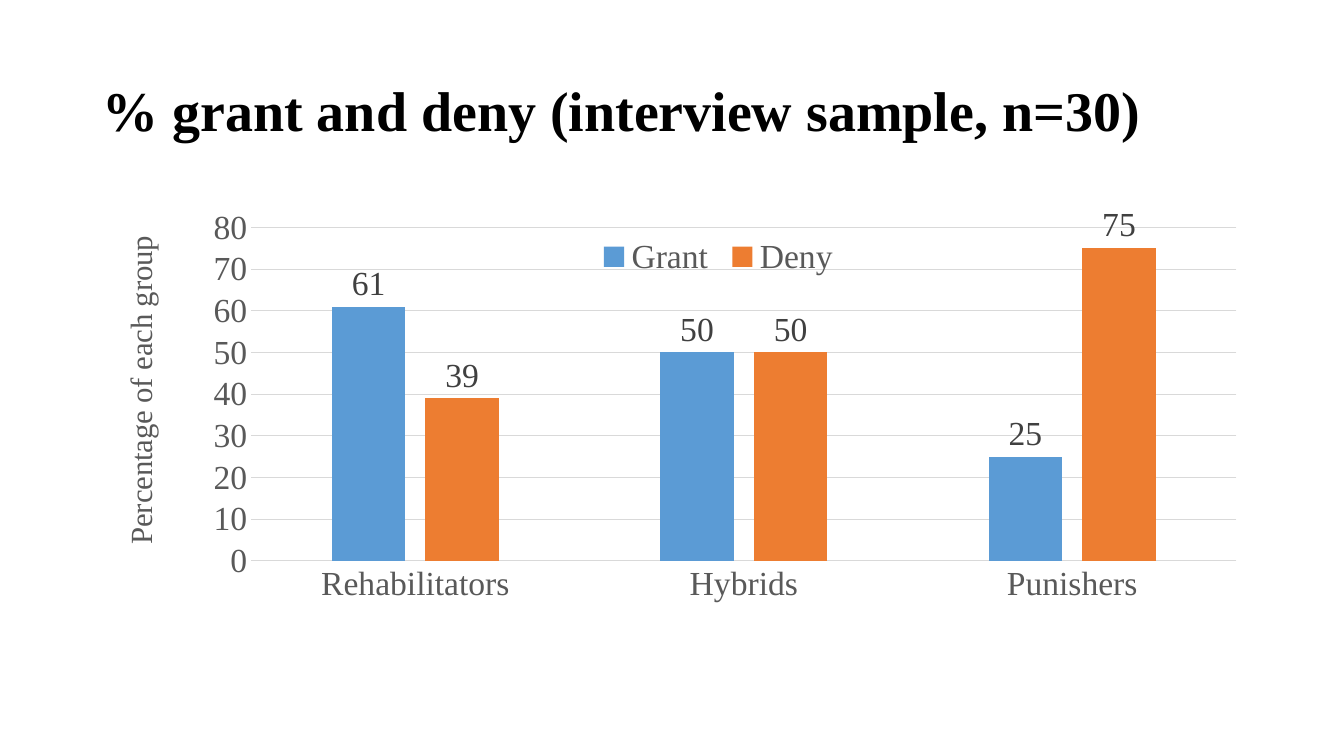
"""Build a slide with a column chart of grant and deny rates by group."""
from lxml import etree
from pptx import Presentation
from pptx.chart.data import CategoryChartData
from pptx.dml.color import RGBColor
from pptx.enum.chart import XL_CHART_TYPE, XL_LABEL_POSITION, XL_LEGEND_POSITION, XL_TICK_MARK
from pptx.enum.text import MSO_ANCHOR, MSO_AUTO_SIZE, PP_ALIGN
from pptx.oxml.ns import qn
from pptx.util import Pt

COLUMN = XL_CHART_TYPE.COLUMN_CLUSTERED
OUTSIDE = XL_LABEL_POSITION.OUTSIDE_END
BOTTOM = XL_LEGEND_POSITION.BOTTOM
NO_TICK = XL_TICK_MARK.NONE
MIDDLE = MSO_ANCHOR.MIDDLE
NO_FIT = MSO_AUTO_SIZE.NONE
LEFT = PP_ALIGN.LEFT
FACE = "Times New Roman"
GREY = "595959"
RULE = "D9D9D9"


def style(font, size, color, bold=False):
    values = {"name": FACE, "size": Pt(size), "bold": bold}
    for key, value in values.items():
        setattr(font, key, value)
    font.color.rgb = RGBColor.from_string(color)


def place(part, index, values):
    for old in part.findall(qn("c:layout")):
        part.remove(old)
    layout = etree.Element(qn("c:layout"))
    manual = etree.SubElement(layout, qn("c:manualLayout"))
    for key, value in values.items():
        etree.SubElement(manual, qn("c:" + key)).set("val", str(value))
    part.insert(index, layout)


deck = Presentation()
deck.slide_width, deck.slide_height = Pt(960), Pt(540)
slide = deck.slides.add_slide(deck.slide_layouts[5])

title = slide.shapes.title
box = {"left": Pt(66), "top": Pt(28.75), "width": Pt(828), "height": Pt(104.4)}
for key, value in box.items():
    setattr(title, key, value)
frame = title.text_frame
frame.text = "% grant and deny (interview sample, n=30)"
for key, value in {"vertical_anchor": MIDDLE, "auto_size": NO_FIT, "word_wrap": True}.items():
    setattr(frame, key, value)
line = frame.paragraphs[0]
line.alignment, line.line_spacing = LEFT, 0.9
style(line.runs[0].font, 40, "000000", True)

data = CategoryChartData()
data.categories = ["Rehabilitators", "Hybrids", "Punishers"]
data.add_series("Grant", [61, 50, 25])
data.add_series("Deny", [39, 50, 75])
chart = slide.shapes.add_chart(COLUMN, Pt(66), Pt(144), Pt(828), Pt(342.7), data).chart
chart.has_title = False
style(chart.font, 24, "000000")

plot = chart.plots[0]
for key, value in {"gap_width": 219, "overlap": -27, "vary_by_categories": False}.items():
    setattr(plot, key, value)
for series, color in zip(plot.series, ["5B9BD5", "ED7D31"]):
    series.format.fill.solid()
    series.format.fill.fore_color.rgb = RGBColor.from_string(color)
    labels = series.data_labels
    labels.show_value, labels.position = True, OUTSIDE
    style(labels.font, 24, "404040")

groups, scale = chart.category_axis, chart.value_axis
for axis in (groups, scale):
    axis.major_tick_mark = axis.minor_tick_mark = NO_TICK
    style(axis.tick_labels.font, 24, GREY)
for key, value in {"minimum_scale": 0, "maximum_scale": 80, "major_unit": 10}.items():
    setattr(scale, key, value)
for rule in (groups.format.line, scale.major_gridlines.format.line):
    rule.width = Pt(0.75)
    rule.color.rgb = RGBColor.from_string(RULE)
scale.format.line.fill.background()

name = scale.axis_title
name.text_frame.text = "Percentage of each group"
style(name.text_frame.paragraphs[0].runs[0].font, 22, GREY)
turn = name._element.find(".//" + qn("a:bodyPr"))
turn.set("rot", "-5400000")
turn.set("vert", "horz")

chart.has_legend = True
legend = chart.legend
legend.position, legend.include_in_layout = BOTTOM, False
style(legend.font, 24, GREY)

edge = {"xMode": "edge", "yMode": "edge"}
area = chart._chartSpace.find(".//" + qn("c:plotArea"))
place(area, 0, {"layoutTarget": "inner", **edge, "x": 0.137, "y": 0.054, "w": 0.85, "h": 0.695})
place(name._element, 1, {**edge, "x": 0.02, "y": 0.06})
place(legend._element, 1, {**edge, "x": 0.43, "y": 0.07, "w": 0.22, "h": 0.09})

deck.save("out.pptx")
